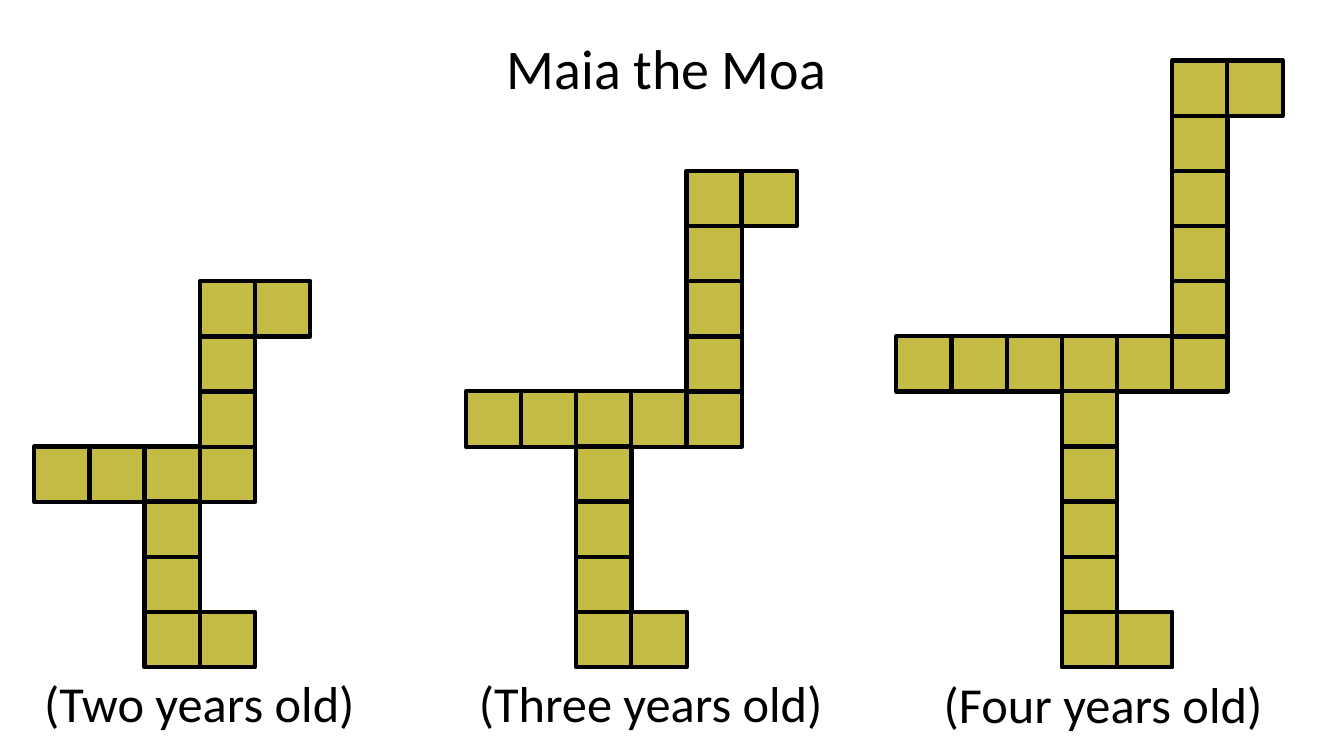
from dataclasses import dataclass

from pptx import Presentation
from pptx.dml.color import RGBColor
from pptx.enum.shapes import MSO_SHAPE
from pptx.enum.text import MSO_ANCHOR, MSO_AUTO_SIZE, PP_ALIGN
from pptx.shapes.group import GroupShape
from pptx.slide import Slide
from pptx.text.text import TextFrame
from pptx.util import Inches, Pt

RECTANGLE = MSO_SHAPE.RECTANGLE
TOP = MSO_ANCHOR.TOP
NO_AUTOFIT = MSO_AUTO_SIZE.NONE
LEFT, CENTER = PP_ALIGN.LEFT, PP_ALIGN.CENTER

OLIVE = RGBColor(0xC4, 0xBB, 0x44)
BLACK = RGBColor(0x00, 0x00, 0x00)
FONT = "Calibri"

SQUARE = 0.55
FOOT_TOP = 6.07
TALLEST_HEAD_TOP = 0.6
PITCH = (FOOT_TOP - TALLEST_HEAD_TOP) / 10  # ten steps from foot to tallest head


@dataclass
class Moa:
    age: int
    caption: str
    left: float
    leg_column: int
    caption_left: float
    caption_top: float = 6.62


MOAS = [
    Moa(2, "(Two years old)", 0.34, 2, 0.34),
    Moa(3, "(Three years old)", 4.62, 2, 4.65),
    Moa(4, "(Four years old)", 8.89, 3, 9.26, 6.63),
]


def moa_cells(moa: Moa) -> list[tuple[int, int]]:
    """List the (column, row) cells; row 0 holds the foot, rows count upwards."""
    limb = moa.age + 1  # squares in the leg and in the neck
    neck_column = moa.age + 1
    body = [(column, limb) for column in range(moa.age + 2)]
    neck = [(neck_column, limb + step) for step in range(1, limb + 1)]
    leg = [(moa.leg_column, row) for row in reversed(range(limb))]
    beak = (neck_column + 1, 2 * limb)
    toe = (moa.leg_column + 1, 0)
    return body + neck + leg + [beak, toe]


def draw_square(bird: GroupShape, left: float, top: float) -> None:
    square = bird.shapes.add_shape(
        RECTANGLE, Inches(left), Inches(top), Inches(SQUARE), Inches(SQUARE))
    square.shadow.inherit = False
    square.fill.solid()
    square.fill.fore_color.rgb = OLIVE
    square.line.color.rgb = BLACK
    square.line.width = Pt(3)


def write_text(frame: TextFrame, text: str, size: int, alignment: PP_ALIGN) -> None:
    frame.word_wrap = True
    frame.auto_size = NO_AUTOFIT
    frame.vertical_anchor = TOP
    frame.text = text
    paragraph = frame.paragraphs[0]
    paragraph.alignment = alignment
    paragraph.font.name = FONT
    paragraph.font.size = Pt(size)
    paragraph.font.color.rgb = BLACK


def draw_moa(slide: Slide, moa: Moa) -> None:
    bird = slide.shapes.add_group_shape()
    for column, row in moa_cells(moa):
        draw_square(bird, moa.left + column * PITCH, FOOT_TOP - row * PITCH)
    caption = slide.shapes.add_textbox(
        Inches(moa.caption_left), Inches(moa.caption_top), Inches(4.25), Inches(0.71))
    write_text(caption.text_frame, moa.caption, 36, LEFT)


def main() -> None:
    presentation = Presentation()
    presentation.slide_width = Inches(13.33)
    presentation.slide_height = Inches(7.5)
    slide = presentation.slides.add_slide(presentation.slide_layouts.get_by_name("Title Only"))

    # Title
    title = slide.shapes.title
    title.left, title.top = Inches(3.72), Inches(0.28)
    title.width, title.height = Inches(5.78), Inches(1.08)
    write_text(title.text_frame, "Maia the Moa", 40, CENTER)

    # Growing moa, one figure per age
    for moa in MOAS:
        draw_moa(slide, moa)

    presentation.save("out.pptx")


if __name__ == "__main__":
    main()
